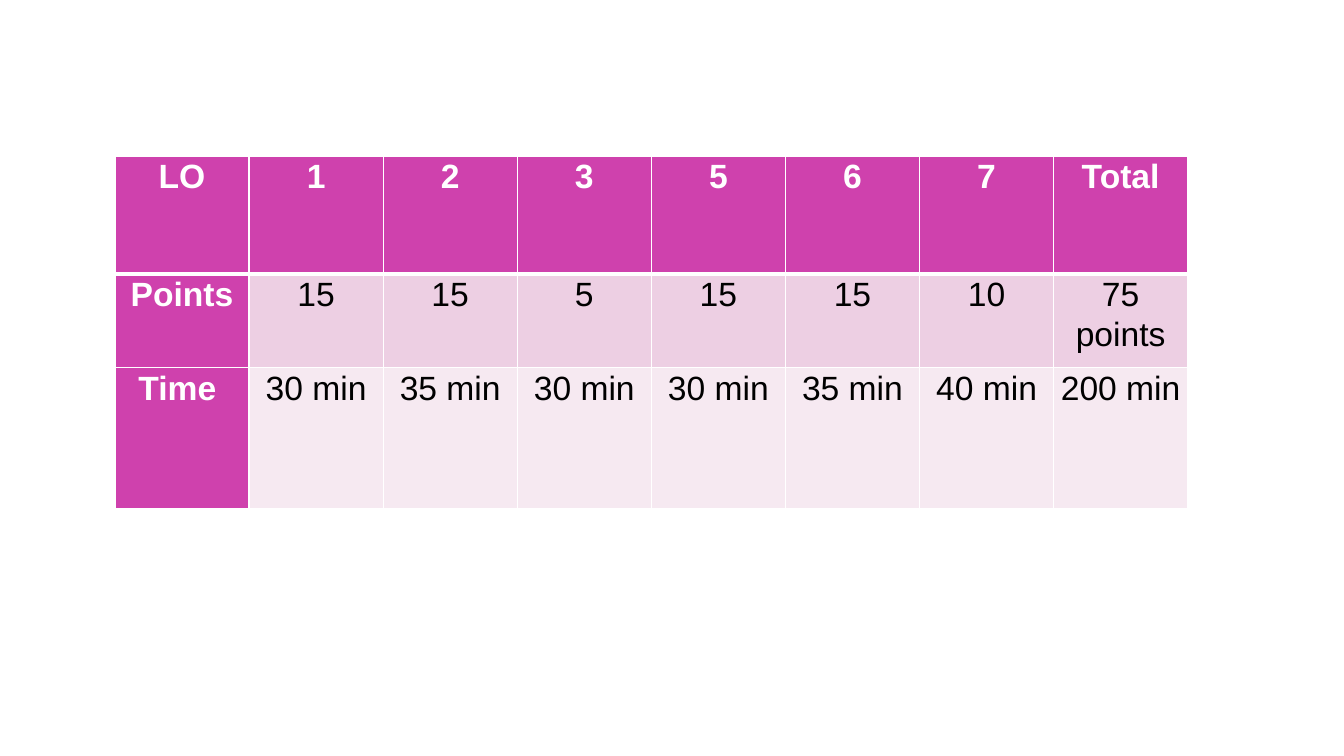
from lxml import etree
from pptx import Presentation
from pptx.dml.color import RGBColor
from pptx.enum import text
from pptx.oxml import ns
from pptx.util import Inches, Pt

COLORS = {
    "header": "CF41AD",
    "points": "EDCFE3",
    "time": "F6E9F1",
    "white": "FFFFFF",
    "black": "000000",
}
ROWS = [
    ["LO", "1", "2", "3", "5", "6", "7", "Total"],
    ["Points", "15", "15", "5", "15", "15", "10", "75 points"],
    ["Time ", "30 min", "35 min", "30 min", "30 min", "35 min", "40 min", "200 min"],
]
ROW_HEIGHTS = [1.17, 0.93, 1.4]
ROW_FILLS = ["header", "points", "time"]
COLUMN_WIDTH = 1.33


def add_border(cell, side, width):
    """Draw a white line on one side (L, R, T, B); call before filling the cell."""
    line = etree.SubElement(cell._tc.get_or_add_tcPr(), ns.qn(f"a:ln{side}"), w=str(Pt(width)))
    fill = etree.SubElement(line, ns.qn("a:solidFill"))
    etree.SubElement(fill, ns.qn("a:srgbClr"), val=COLORS["white"])


presentation = Presentation()
presentation.slide_width = Inches(13.33)
presentation.slide_height = Inches(7.5)
slide = presentation.slides.add_slide(presentation.slide_layouts[6])

table = slide.shapes.add_table(
    len(ROWS), len(ROWS[0]), Inches(1.14), Inches(1.55),
    Inches(COLUMN_WIDTH * len(ROWS[0])), Inches(sum(ROW_HEIGHTS)),
).table
for column in table.columns:
    column.width = Inches(COLUMN_WIDTH)

for row_index, labels in enumerate(ROWS):
    table.rows[row_index].height = Inches(ROW_HEIGHTS[row_index])
    for column_index, label in enumerate(labels):
        cell = table.cell(row_index, column_index)
        is_header = row_index == 0 or column_index == 0
        cell.margin_left = cell.margin_right = Inches(0.07)
        cell.margin_top = cell.margin_bottom = 0

        add_border(cell, "L", 1)
        add_border(cell, "R", 1)
        add_border(cell, "T", 3 if row_index == 1 else 1)
        add_border(cell, "B", 3 if row_index == 0 else 1)
        cell.fill.solid()
        fill_name = "header" if is_header else ROW_FILLS[row_index]
        cell.fill.fore_color.rgb = RGBColor.from_string(COLORS[fill_name])

        cell.text = label
        paragraph = cell.text_frame.paragraphs[0]
        paragraph.alignment = text.PP_ALIGN.CENTER
        paragraph.line_spacing = 1.06
        paragraph.space_after = Pt(8)
        paragraph.font.name = "Arial"
        paragraph.font.size = Pt(24)
        paragraph.font.bold = is_header
        text_color = COLORS["white" if is_header else "black"]
        paragraph.font.color.rgb = RGBColor.from_string(text_color)

presentation.save("out.pptx")
